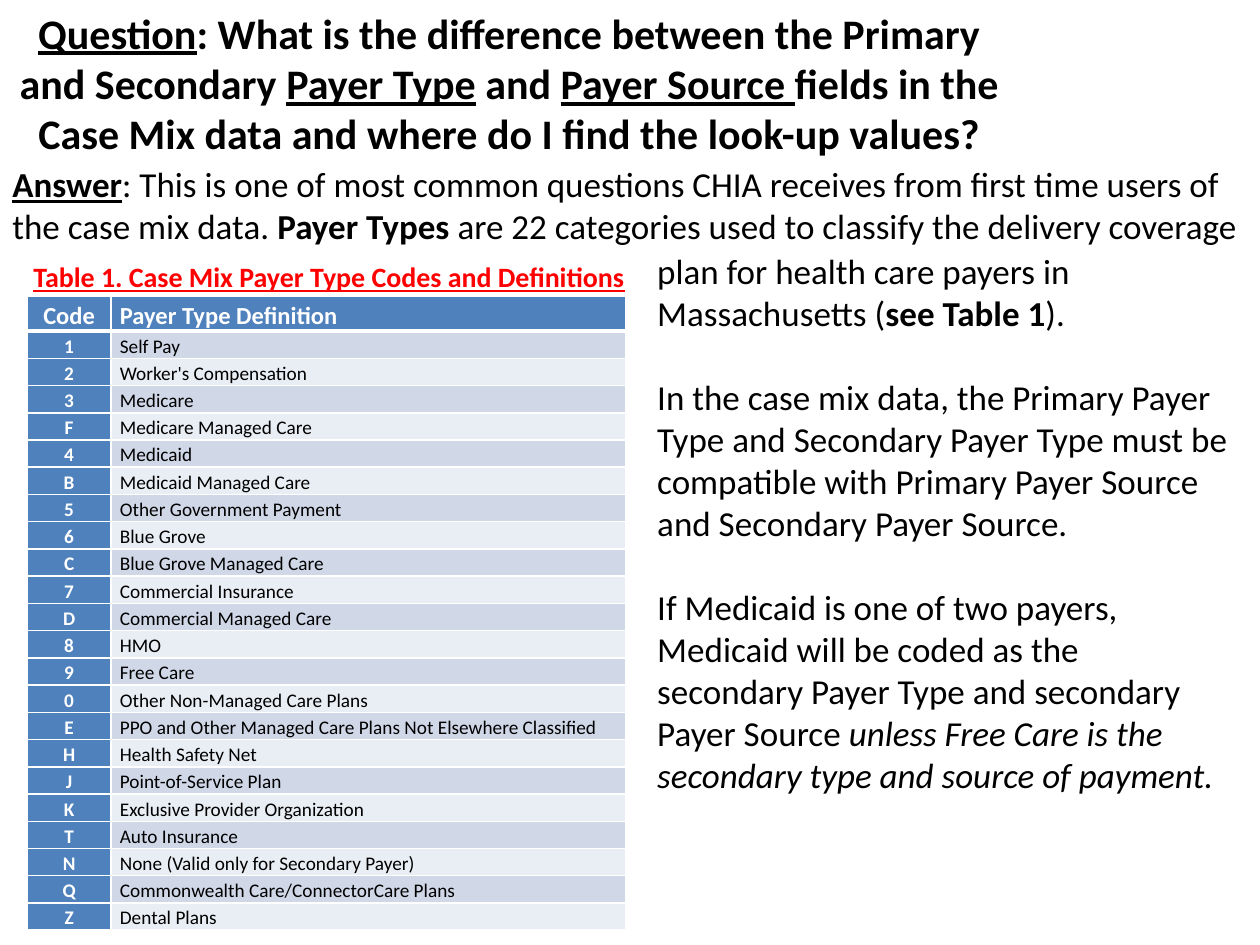
from lxml.etree import SubElement
from pptx import Presentation
from pptx.dml.color import RGBColor
from pptx.enum.text import MSO_ANCHOR as ANCHOR, PP_ALIGN as ALIGN
from pptx.oxml.ns import qn
from pptx.util import Pt

FONT = "Calibri"
BLACK, WHITE, RED, BLUE = "000000", "FFFFFF", "FF0000", "4F81BD"
BANDS = ("D0D8E8", "E9EDF4")
PAYER_TYPES = [
    ("1", "Self Pay"),
    ("2", "Worker's Compensation"),
    ("3", "Medicare"),
    ("F", "Medicare Managed Care"),
    ("4", "Medicaid"),
    ("B", "Medicaid Managed Care"),
    ("5", "Other Government Payment"),
    ("6", "Blue Grove"),
    ("C", "Blue Grove Managed Care"),
    ("7", "Commercial Insurance"),
    ("D", "Commercial Managed Care"),
    ("8", "HMO"),
    ("9", "Free Care"),
    ("0", "Other Non-Managed Care Plans"),
    ("E", "PPO and Other Managed Care Plans Not Elsewhere Classified"),
    ("H", "Health Safety Net"),
    ("J", "Point-of-Service Plan"),
    ("K", "Exclusive Provider Organization"),
    ("T", "Auto Insurance"),
    ("N", "None (Valid only for Secondary Payer)"),
    ("Q", "Commonwealth Care/ConnectorCare Plans"),
    ("Z", "Dental Plans"),
]


def rgb(color):
    """Turn a hex string into a colour."""
    return RGBColor.from_string(color)


def add_run(p, text, size, color=BLACK, style=""):
    """Add a run; style letters b, i and u mean bold, italic and underline."""
    r = p.add_run()
    r.text = text
    f = r.font
    f.name, f.size, f.color.rgb = FONT, Pt(size), rgb(color)
    f.bold, f.italic, f.underline = (k in style for k in "biu")


def add_text(s, box, paragraphs, size, color=BLACK, align=ALIGN.LEFT,
             anchor=ANCHOR.TOP, wrap=True):
    """Add a text box of (space before, runs) paragraphs."""
    tf = s.shapes.add_textbox(*map(Pt, box)).text_frame
    tf.word_wrap, tf.vertical_anchor = wrap, anchor
    for i, (space, runs) in enumerate(paragraphs):
        p = tf.add_paragraph() if i else tf.paragraphs[0]
        p.alignment = align
        p.space_before = Pt(space)
        for text, style in runs:
            add_run(p, text, size, color, style)


def add_question(s, box):
    """Place the question heading."""
    add_text(s, box, [(0, [
        ("Question", "bu"),
        (": What is the difference between the Primary and Secondary ", "b"),
        ("Payer Type", "bu"),
        (" and ", "b"),
        ("Payer Source ", "bu"),
        ("fields in the Case Mix data and where do I find the look-up values?", "b"),
    ])], 24, align=ALIGN.CENTER, anchor=ANCHOR.MIDDLE)


def add_answer(s, box, split, column_top):
    """Place the answer across the box, then on in a column right of split."""
    left, top, width, height = box
    add_text(s, (left, top, width, column_top), [(0, [
        ("Answer", "bu"),
        (": This is one of most common questions CHIA receives from first "
         "time users of the case mix data. ", ""),
        ("Payer Types ", "b"),
        ("are 22 categories used to classify the delivery coverage", ""),
    ])], 20)
    column = (left + split, top + column_top, width - split, height - column_top)
    add_text(s, column, [
        (0, [("plan for health care payers in Massachusetts (", ""),
             ("see Table 1", "b"), (").", "")]),
        (24, [("In the case mix data, the Primary Payer Type and Secondary "
               "Payer Type must be compatible with Primary Payer Source and "
               "Secondary Payer Source.", "")]),
        (24, [("If Medicaid is one of two payers, Medicaid will be coded as the", "")]),
        (0, [("secondary Payer Type and secondary Payer Source ", ""),
             ("unless Free Care is the", "i")]),
        (0, [("secondary type and source of payment.", "i")]),
    ], 20)


def set_borders(cell, top, bottom):
    """Draw white cell borders with the given top and bottom widths."""
    tcPr = cell._tc.get_or_add_tcPr()
    for side, width in zip("LRTB", (1, 1, top, bottom)):
        ln = SubElement(tcPr, qn(f"a:ln{side}"), w=str(Pt(width)))
        fill = SubElement(ln, qn("a:solidFill"))
        SubElement(fill, qn("a:srgbClr"), val=WHITE)


def fill_cell(cell, text, row, col):
    """Write and style one cell by its place in the table."""
    heading = row == 0 or col == 0
    set_borders(cell, 3 if row == 1 else 1, 3 if row == 0 else 1)
    cell.fill.solid()
    cell.fill.fore_color.rgb = rgb(BLUE if heading else BANDS[(row - 1) % 2])
    cell.vertical_anchor = ANCHOR.BOTTOM
    cell.margin_left = cell.margin_right = Pt(5)
    cell.margin_top = cell.margin_bottom = 0
    p = cell.text_frame.paragraphs[0]
    p.alignment = ALIGN.LEFT if col else ALIGN.CENTER
    p.line_spacing = 1.15
    add_run(p, text, 11 if row else 14, WHITE if heading else BLACK,
            "b" if heading else "")


def add_payer_table(s, box):
    """Place the caption and the table of payer types."""
    left, top, width, height = box
    caption, header, code = 24.5, 19.7, 48
    add_text(s, (left - 3.5, top, width + 14, 26.5), [
        (0, [("Table 1. Case Mix Payer Type Codes and Definitions", "bu")]),
    ], 16, RED, wrap=False)
    rows = [("Code", "Payer Type Definition"), *PAYER_TYPES]
    frame = (left, top + caption, width, height - caption)
    table = s.shapes.add_table(len(rows), 2, *map(Pt, frame)).table
    table.columns[0].width, table.columns[1].width = Pt(code), Pt(width - code)
    row_height = (height - caption - header) / len(PAYER_TYPES)
    for i, texts in enumerate(rows):
        table.rows[i].height = Pt(row_height if i else header)
        for j, text in enumerate(texts):
            fill_cell(table.cell(i, j), text, i, j)


def main():
    """Build and save the slide."""
    prs = Presentation()
    prs.slide_width, prs.slide_height = Pt(720), Pt(540)
    s = prs.slides.add_slide(prs.slide_layouts[6])
    add_question(s, (0, -5, 582, 104.5))
    add_payer_table(s, (15.5, 145, 342, 387))
    add_answer(s, (0, 89.5, 720, 372), 368.5, 49.5)
    prs.save("out.pptx")


if __name__ == "__main__":
    main()
